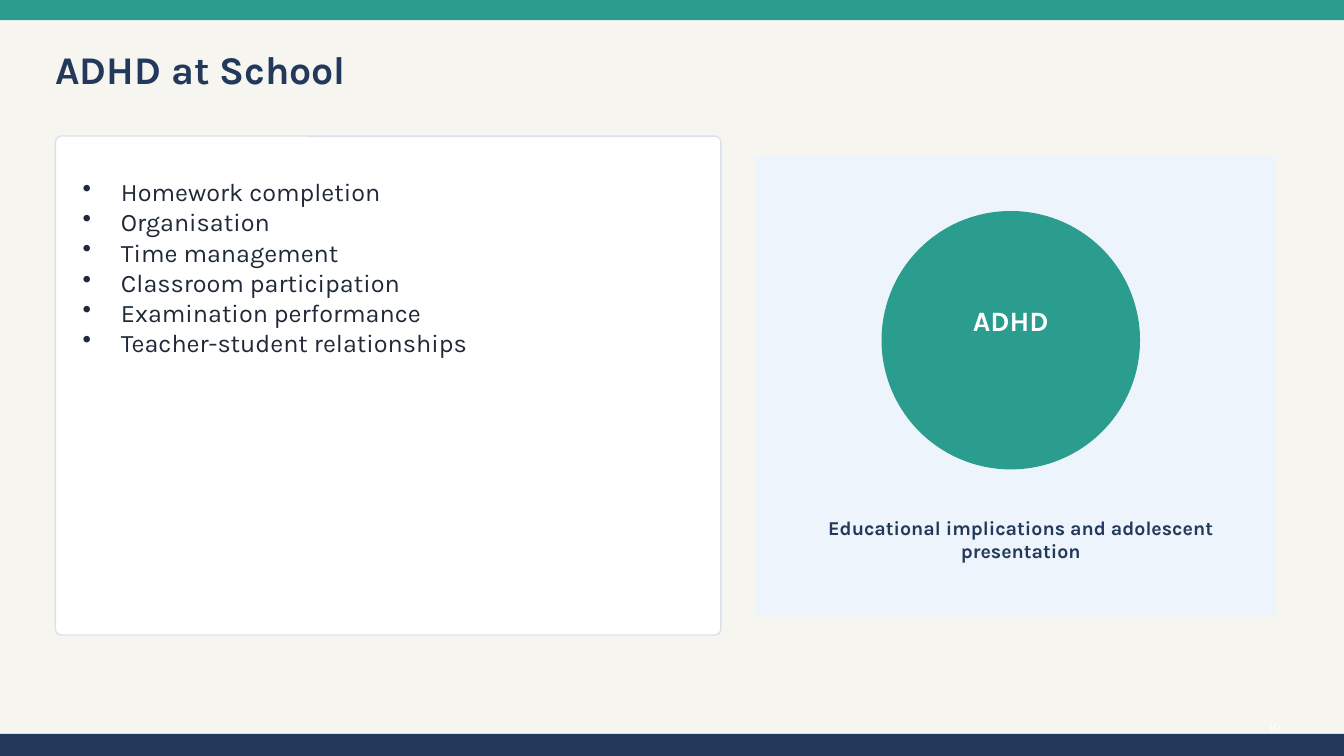
from lxml.etree import SubElement
from pptx import Presentation
from pptx.dml.color import RGBColor
from pptx.enum.shapes import MSO_SHAPE
from pptx.enum.text import MSO_ANCHOR, PP_ALIGN
from pptx.oxml.ns import qn
from pptx.util import Inches, Pt

FONT = "Karla"
COLORS = {
    "cream": "F7F5F0", "teal": "2A9D8F", "navy": "23395B", "white": "FFFFFF",
    "border": "D9E2EC", "ink": "1F2937", "pale": "EEF4FB",
}
TITLE = "ADHD at School"
TOPICS = [
    "Homework completion",
    "Organisation",
    "Time management",
    "Classroom participation",
    "Examination performance",
    "Teacher-student relationships",
]
CIRCLE_LABEL = "ADHD"
CAPTION = "Educational implications and adolescent presentation"
PAGE_NUMBER = "10"
WIDTH, HEIGHT = 13.33, 7.5
FOOTER_HEIGHT = 0.22
BULLET_INDENT = 0.38


def color(name):
    return RGBColor.from_string(COLORS[name])


def add_panel(slide, kind, box, fill, line=None):
    shape = slide.shapes.add_shape(kind, *map(Inches, box))
    shape.shadow.inherit = False
    shape.fill.solid()
    shape.fill.fore_color.rgb = color(fill)
    if line:
        shape.line.color.rgb = color(line)
        shape.line.width = Pt(1)
    else:
        shape.line.fill.background()
    return shape


def add_bullet(paragraph):
    properties = paragraph._p.get_or_add_pPr()
    properties.set("marL", str(Inches(BULLET_INDENT)))
    properties.set("indent", str(-Inches(BULLET_INDENT)))
    SubElement(properties, qn("a:buChar")).set("char", "•")


def add_text(slide, box, lines, size, ink, bold=False, align=PP_ALIGN.LEFT,
             anchor=MSO_ANCHOR.MIDDLE, bullets=False):
    frame = slide.shapes.add_textbox(*map(Inches, box)).text_frame
    frame.word_wrap = True
    frame.vertical_anchor = anchor
    frame.margin_left = frame.margin_right = 0
    frame.margin_top = frame.margin_bottom = 0
    for index, line in enumerate(lines):
        paragraph = frame.add_paragraph() if index else frame.paragraphs[0]
        paragraph.alignment = align
        if bullets:
            add_bullet(paragraph)
        run = paragraph.add_run()
        run.text = line
        run.font.name = FONT
        run.font.size = Pt(size)
        run.font.bold = bold
        run.font.color.rgb = color(ink)


def main():
    presentation = Presentation()
    presentation.slide_width = Inches(WIDTH)
    presentation.slide_height = Inches(HEIGHT)
    slide = presentation.slides.add_slide(presentation.slide_layouts[6])
    slide.background.fill.solid()
    slide.background.fill.fore_color.rgb = color("cream")

    add_panel(slide, MSO_SHAPE.RECTANGLE, (0, 0, WIDTH, 0.2), "teal")
    add_panel(slide, MSO_SHAPE.RECTANGLE,
              (0, HEIGHT - FOOTER_HEIGHT, WIDTH, FOOTER_HEIGHT), "navy")
    add_text(slide, (12.35, 7.12, 0.35, 0.18), [PAGE_NUMBER], 9, "white",
             align=PP_ALIGN.RIGHT)
    add_text(slide, (0.55, 0.38, 8.8, 0.6), [TITLE], 28, "navy", bold=True)

    card = add_panel(slide, MSO_SHAPE.ROUNDED_RECTANGLE,
                     (0.55, 1.35, 6.6, 4.95), "white", "border")
    card.adjustments[0] = 0.012
    add_text(slide, (0.82, 1.75, 5.95, 4.25), TOPICS, 18, "ink",
             anchor=MSO_ANCHOR.TOP, bullets=True)

    add_panel(slide, MSO_SHAPE.RECTANGLE, (7.5, 1.55, 5.15, 4.55), "pale", "pale")
    add_panel(slide, MSO_SHAPE.OVAL, (8.75, 2.1, 2.55, 2.55), "teal", "teal")
    add_text(slide, (8.95, 2.95, 2.15, 0.45), [CIRCLE_LABEL], 20, "white",
             bold=True, align=PP_ALIGN.CENTER)
    add_text(slide, (8, 5, 4.25, 0.7), [CAPTION], 14, "navy",
             bold=True, align=PP_ALIGN.CENTER)

    presentation.save("out.pptx")


if __name__ == "__main__":
    main()
